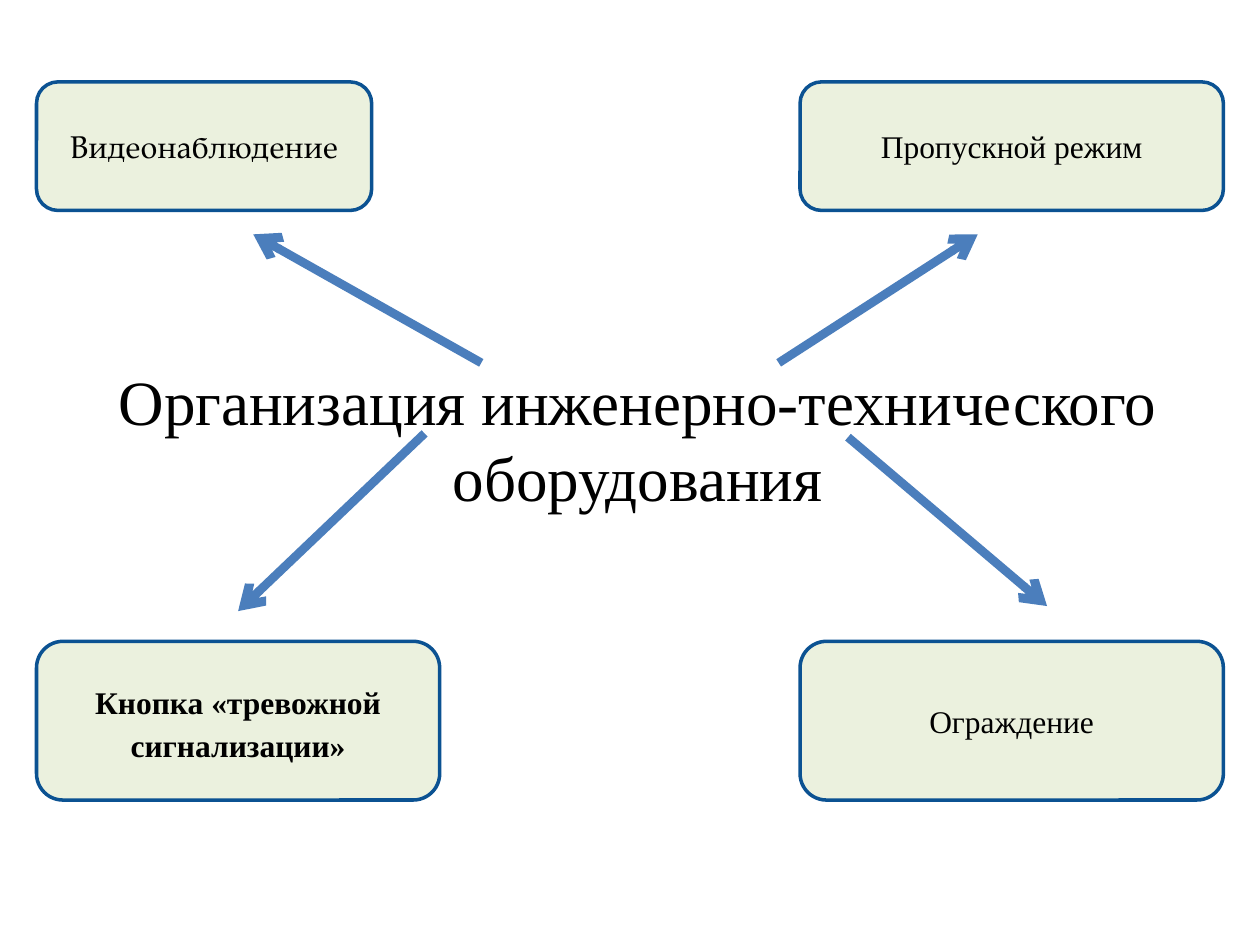
"""Build a slide with a central topic and four arrows to its parts."""
from dataclasses import dataclass

from lxml import etree
from pptx import Presentation
from pptx.dml.color import RGBColor
from pptx.enum.shapes import MSO_CONNECTOR, MSO_SHAPE
from pptx.enum.text import MSO_ANCHOR, PP_ALIGN
from pptx.oxml.ns import qn
from pptx.util import Inches, Pt

ROUNDED = MSO_SHAPE.ROUNDED_RECTANGLE
STRAIGHT = MSO_CONNECTOR.STRAIGHT
MIDDLE = MSO_ANCHOR.MIDDLE
CENTER = PP_ALIGN.CENTER


@dataclass(frozen=True)
class Theme:
    text: str = "000000"
    box_fill: str = "EBF1DE"
    box_line: str = "0B5292"
    arrow: str = "4B7EBC"
    serif: str = "Times New Roman"
    accent_serif: str = "TeX Gyre Pagella"
    title_size: int = 36
    box_size: int = 18
    box_line_width: int = 2
    arrow_width: int = 5


THEME = Theme()
SLIDE_WIDTH, SLIDE_HEIGHT = 10, 7.5
COLUMNS = (0.29, 6.35)
ROWS = ((0.65, 1.02), (5.09, 1.26))

TITLE = "Организация инженерно-технического оборудования"
BOXES = [
    {"text": "Видеонаблюдение", "cell": (0, 0), "width": 2.66, "font": THEME.accent_serif},
    {"text": "Пропускной режим", "cell": (1, 0), "width": 3.36},
    {"text": "Кнопка «тревожной сигнализации»", "cell": (0, 1), "width": 3.2,
     "bold": True, "line_spacing": 1.15, "space_after": 10},
    {"text": "Ограждение", "cell": (1, 1), "width": 3.36},
]
ARROWS = [
    ((3.37, 3.44), (1.89, 4.85)),
    ((6.73, 3.47), (8.31, 4.81)),
    ((3.82, 2.88), (2.01, 1.86)),
    ((6.18, 2.88), (7.76, 1.86)),
]


def color(value):
    return RGBColor.from_string(value)


def write_text(shape, text, size, font=THEME.serif, bold=False):
    frame = shape.text_frame
    frame.word_wrap = True
    frame.vertical_anchor = MIDDLE
    paragraph = frame.paragraphs[0]
    paragraph.alignment = CENTER
    run = paragraph.add_run()
    run.text = text
    run.font.name = font
    run.font.size = Pt(size)
    run.font.bold = bold
    run.font.color.rgb = color(THEME.text)
    return paragraph


def add_title(slide):
    title = slide.shapes.add_textbox(0, 0, Inches(SLIDE_WIDTH), Inches(SLIDE_HEIGHT))
    write_text(title, TITLE, THEME.title_size)
    title.text_frame.margin_left = Inches(0.22)
    title.text_frame.margin_bottom = Inches(0.59)


def add_box(slide, text, cell, width, font=THEME.serif, bold=False,
            line_spacing=None, space_after=None):
    column, row = cell
    top, height = ROWS[row]
    box = slide.shapes.add_shape(
        ROUNDED, *map(Inches, (COLUMNS[column], top, width, height)))
    box.shadow.inherit = False
    box.fill.solid()
    box.fill.fore_color.rgb = color(THEME.box_fill)
    box.line.color.rgb = color(THEME.box_line)
    box.line.width = Pt(THEME.box_line_width)
    paragraph = write_text(box, text, THEME.box_size, font, bold)
    if line_spacing:
        paragraph.line_spacing = line_spacing
    if space_after:
        paragraph.space_after = Pt(space_after)


def add_arrow(slide, start, end):
    arrow = slide.shapes.add_connector(STRAIGHT, *map(Inches, (*start, *end)))
    arrow.line.color.rgb = color(THEME.arrow)
    arrow.line.width = Pt(THEME.arrow_width)
    properties = arrow._element.spPr
    etree.SubElement(properties.find(qn("a:ln")), qn("a:tailEnd"), type="arrow")
    etree.SubElement(properties, qn("a:effectLst"))


def main():
    presentation = Presentation()
    presentation.slide_width = Inches(SLIDE_WIDTH)
    presentation.slide_height = Inches(SLIDE_HEIGHT)
    slide = presentation.slides.add_slide(presentation.slide_layouts[6])
    add_title(slide)
    for box in BOXES:
        add_box(slide, **box)
    for start, end in ARROWS:
        add_arrow(slide, start, end)
    presentation.save("out.pptx")


if __name__ == "__main__":
    main()
